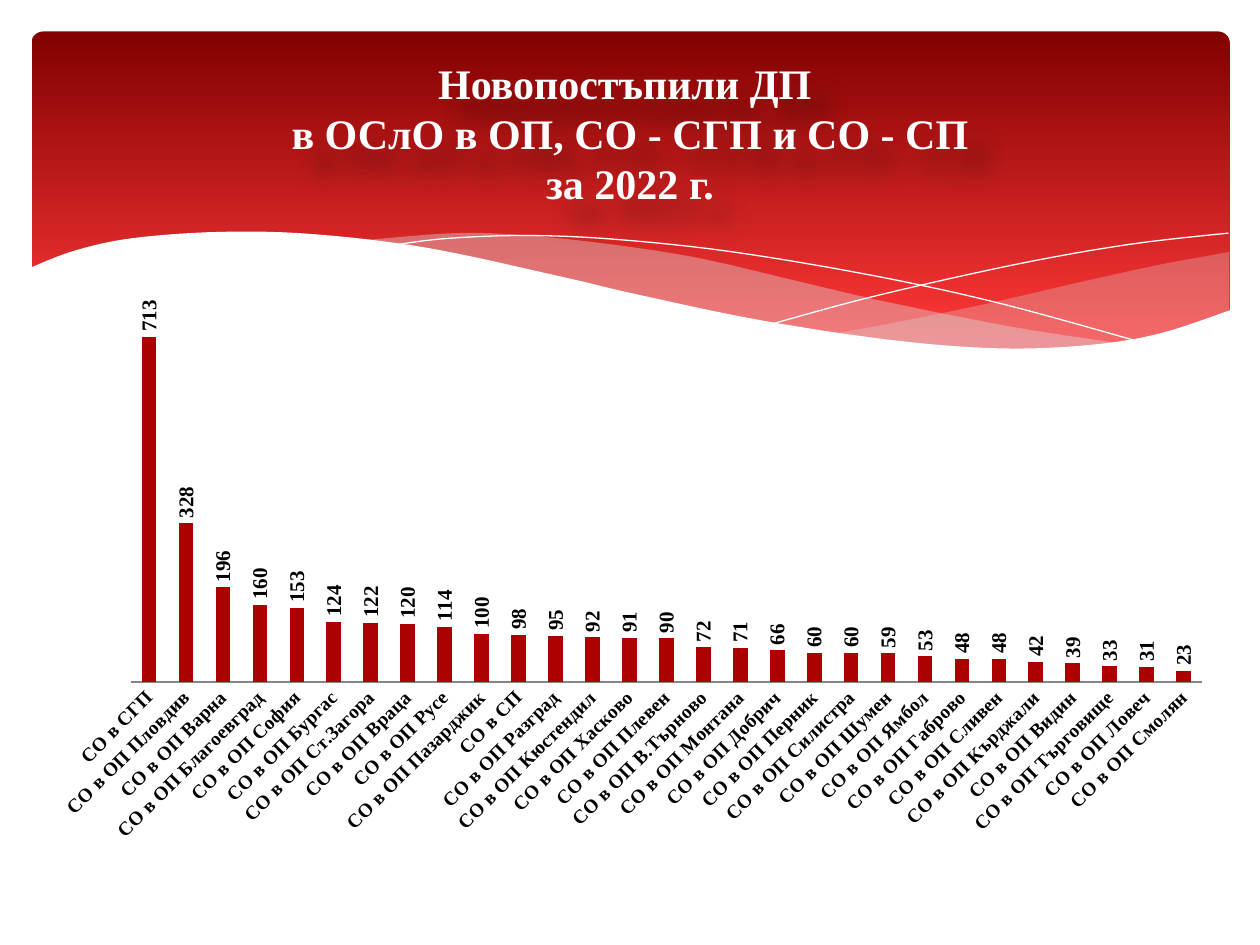
from lxml import etree
from pptx import Presentation
from pptx.chart.data import CategoryChartData
from pptx.dml.color import RGBColor
from pptx.enum.chart import XL_CHART_TYPE, XL_LABEL_POSITION, XL_TICK_MARK
from pptx.enum.shapes import MSO_SHAPE
from pptx.enum.text import MSO_ANCHOR, PP_ALIGN
from pptx.oxml import parse_xml
from pptx.oxml.ns import nsdecls, qn
from pptx.util import Pt

COLUMNS = XL_CHART_TYPE.COLUMN_CLUSTERED
OUTSIDE = XL_LABEL_POSITION.OUTSIDE_END
NO_TICK = XL_TICK_MARK.NONE
ROUNDED = MSO_SHAPE.ROUNDED_RECTANGLE
MIDDLE = MSO_ANCHOR.MIDDLE
CENTER = PP_ALIGN.CENTER

SERIF = "Times New Roman"
BLACK, WHITE, BAND_GRAY = "000000", "FFFFFF", "DEDEE0"
TITLE_LINES = ["Новопостъпили ДП ", "в ОСлО в ОП, СО - СГП и СО - СП", "за 2022 г."]

CASES = [
    ("СО в СГП", 713), ("СО в ОП Пловдив", 328), ("СО в ОП Варна", 196),
    ("СО в ОП Благоевград", 160), ("СО в ОП София", 153), ("СО в ОП Бургас", 124),
    ("СО в ОП Ст.Загора", 122), ("СО в ОП Враца", 120), ("СО в ОП Русе", 114),
    ("СО в ОП Пазарджик", 100), ("СО в СП", 98), ("СО в ОП Разград", 95),
    ("СО в ОП Кюстендил", 92), ("СО в ОП Хасково", 91), ("СО в ОП Плевен", 90),
    ("СО в ОП В.Търново", 72), ("СО в ОП Монтана", 71), ("СО в ОП Добрич", 66),
    ("СО в ОП Перник", 60), ("СО в ОП Силистра", 60), ("СО в ОП Шумен", 59),
    ("СО в ОП Ямбол", 53), ("СО в ОП Габрово", 48), ("СО в ОП Сливен", 48),
    ("СО в ОП Кърджали", 42), ("СО в ОП Видин", 39), ("СО в ОП Търговище", 33),
    ("СО в ОП Ловеч", 31), ("СО в ОП Смолян", 23),
]

RIGHT_BAND = [
    [(702.5, 144), (663, 151.2), (620, 160.6), (561, 174.2), (508, 185), (476, 190.8)],
    [(476, 190.8), (518, 195.5), (562, 199.4), (601, 199.9), (634, 197),
     (663, 190.8), (702.5, 177.8)],
]
LONG_BAND = [
    [(643, 196.6), (581, 187.2), (508, 172.8), (453, 160), (400, 147.6),
     (352, 140), (302, 134.6), (260, 133.2), (206, 137.5)],
    [(206, 137.5), (261, 146.2), (323, 159.8), (408, 178.6), (479, 191.5),
     (548, 198.7), (603, 200.2), (643, 196.6)],
]
FALLING_LINE = [
    [(222.5, 140.4), (254, 136.4), (300, 134.6), (352, 136.8), (419, 144),
     (500, 157.7), (572, 173.5), (653, 195.8)],
]
RISING_LINE = [[(441.5, 185), (500, 169.2), (580, 151.2), (645, 139.7), (702, 133.2)]]
WHITE_WAVE = [
    [(703.5, 177.1), (662, 190.8), (621, 197.3), (571, 199.1), (510, 194.4),
     (434, 182.9), (362, 167.8), (322, 158.4), (245, 141.8), (180, 133.9),
     (127, 132.5), (76, 136.1), (42.5, 143.3), (16.5, 153.4)],
    [(16.5, 237), (703.5, 237)],
]


def color(value):
    return RGBColor.from_string(value)


def set_font(font, size, value):
    font.name = SERIF
    font.size = Pt(size)
    font.bold = True
    font.color.rgb = color(value)


def smooth(knots, steps=6):
    padded = [knots[0], *knots, knots[-1]]
    points = [knots[0]]
    for before, start, end, after in zip(padded, padded[1:], padded[2:], padded[3:]):
        for step in range(1, steps + 1):
            t = step / steps
            points.append(tuple(
                b + ((c - a) * t + (2 * a - 5 * b + 4 * c - d) * t ** 2
                     + (3 * b - a - 3 * c + d) * t ** 3) / 2
                for a, b, c, d in zip(before, start, end, after)
            ))
    return points


def add_curve(page, curves, fill=None, opacity=100, line=None):
    points = [(Pt(x), Pt(y)) for curve in curves for x, y in smooth(curve)]
    builder = page.shapes.build_freeform(*points[0])
    builder.add_line_segments(points[1:], close=fill is not None)
    shape = builder.convert_to_shape()
    shape.shadow.inherit = False
    if fill:
        shape.fill.solid()
        shape.fill.fore_color.rgb = color(fill)
        for tint in shape.fill._xPr.iter(qn("a:srgbClr")):
            etree.SubElement(tint, qn("a:alpha"), val=str(opacity * 1000))
    else:
        shape.fill.background()
    if line:
        shape.line.color.rgb = color(line)
        shape.line.width = Pt(0)
    else:
        shape.line.fill.background()


def add_banner(page):
    banner = page.shapes.add_shape(ROUNDED, Pt(18), Pt(18), Pt(684.7), Pt(194.4))
    banner.adjustments[0] = 0.034
    banner.shadow.inherit = False
    banner.line.fill.background()
    banner.fill.gradient()
    banner.fill.gradient_angle = 270
    stops = banner.fill.gradient_stops
    for stop, position, value in zip(stops, (0, 0.9), ("820101", "FE3737")):
        stop.position = position
        stop.color.rgb = color(value)


def add_title(page):
    box = page.shapes.add_textbox(Pt(36), Pt(26.6), Pt(648), Pt(98.6))
    frame = box.text_frame
    frame.word_wrap = True
    frame.vertical_anchor = MIDDLE
    para = frame.paragraphs[0]
    para.text = "\v".join(TITLE_LINES)
    para.alignment = CENTER
    set_font(para.font, 24, WHITE)
    box._element.spPr.append(parse_xml(
        f'<a:effectLst {nsdecls("a")}><a:outerShdw blurRad="152400" dist="228600" '
        'dir="3000000" algn="tl"><a:srgbClr val="000000"><a:alpha val="30000"/>'
        '</a:srgbClr></a:outerShdw></a:effectLst>'
    ))


def place_plot(chart, **fractions):
    plot_area = chart._chartSpace.chart.plotArea
    for layout in plot_area.findall(qn("c:layout")):
        plot_area.remove(layout)
    layout = etree.Element(qn("c:layout"))
    manual = etree.SubElement(layout, qn("c:manualLayout"))
    settings = {"layoutTarget": "inner", "xMode": "edge", "yMode": "edge", **fractions}
    for name, value in settings.items():
        etree.SubElement(manual, qn(f"c:{name}"), val=str(value))
    plot_area.insert(0, layout)


def rotate_text(chart, owner, degrees):
    for body in chart._chartSpace.xpath(f".//c:{owner}/c:txPr/a:bodyPr"):
        body.set("rot", str(degrees * 60000))
        body.set("vert", "horz")


def add_cases_chart(page):
    data = CategoryChartData()
    data.categories = [name for name, count in CASES]
    data.add_series("Series 1", [count for name, count in CASES])
    frame = page.shapes.add_chart(COLUMNS, Pt(20.2), Pt(162), Pt(680.4), Pt(325.4), data)
    chart = frame.chart
    chart.has_legend = False
    chart.has_title = False
    chart.font.name = "Cabin"
    chart.font.size = Pt(18)
    chart.font.color.rgb = color(BLACK)

    values = chart.value_axis
    values.visible = False
    values.has_major_gridlines = False
    values.minimum_scale, values.maximum_scale = 0, 800
    offices = chart.category_axis
    offices.major_tick_mark = NO_TICK
    offices.format.line.color.rgb = color("868686")
    set_font(offices.tick_labels.font, 11, BLACK)

    plot = chart.plots[0]
    plot.gap_width = 150
    plot.overlap = -25
    plot.vary_by_categories = False
    bars = plot.series[0]
    bars.format.fill.solid()
    bars.format.fill.fore_color.rgb = color("AD0101")
    labels = bars.data_labels
    labels.show_value = True
    labels.position = OUTSIDE
    set_font(labels.font, 12, BLACK)

    rotate_text(chart, "catAx", -45)
    rotate_text(chart, "dLbls", -90)
    place_plot(chart, x=0.08, y=0.02, w=0.9, h=0.68)


def main():
    deck = Presentation()
    deck.slide_width, deck.slide_height = Pt(720), Pt(540)
    page = deck.slides.add_slide(deck.slide_layouts[6])
    add_banner(page)
    add_curve(page, RIGHT_BAND, fill=BAND_GRAY, opacity=29)
    add_curve(page, LONG_BAND, fill=BAND_GRAY, opacity=40)
    add_curve(page, FALLING_LINE, line=WHITE)
    add_curve(page, RISING_LINE, line=WHITE)
    add_curve(page, WHITE_WAVE, fill=WHITE)
    add_cases_chart(page)
    add_title(page)
    deck.save("out.pptx")


if __name__ == "__main__":
    main()
